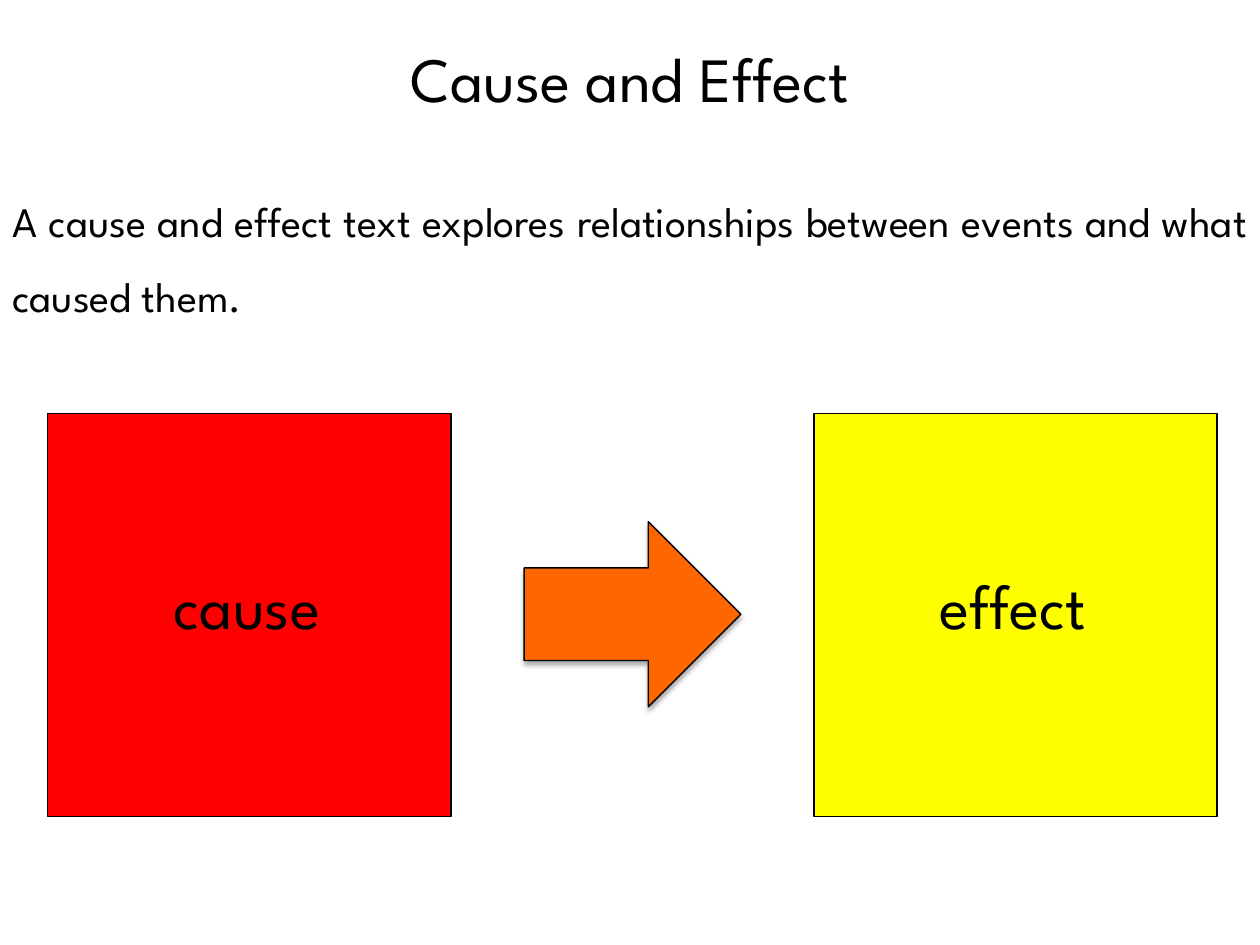
from lxml import etree
from pptx import Presentation
from pptx.dml.color import RGBColor
from pptx.enum.shapes import MSO_SHAPE
from pptx.enum.text import MSO_ANCHOR, MSO_AUTO_SIZE, PP_ALIGN
from pptx.oxml.ns import qn
from pptx.util import Inches, Pt

RECTANGLE, RIGHT_ARROW = MSO_SHAPE.RECTANGLE, MSO_SHAPE.RIGHT_ARROW
CENTER, JUSTIFY = PP_ALIGN.CENTER, PP_ALIGN.JUSTIFY
TOP, GROW = MSO_ANCHOR.TOP, MSO_AUTO_SIZE.SHAPE_TO_FIT_TEXT
FONT = "League Spartan"
COLORS = {"ink": "000000", "cause": "FF0000", "effect": "FFFF00", "arrow": "FF6600"}

deck = Presentation()
deck.slide_width, deck.slide_height = Inches(10), Inches(7.5)
page = deck.slides.add_slide(deck.slide_layouts[5])


def write(box, text, size, align, spacing=1.0):
    frame = box.text_frame
    frame.word_wrap = True
    frame.auto_size = GROW
    frame.vertical_anchor = TOP
    para = frame.paragraphs[0]
    para.alignment = align
    para.line_spacing = spacing
    span = para.add_run()
    span.text = text
    span.font.name = FONT
    span.font.size = Pt(size)
    span.font.color.rgb = RGBColor.from_string(COLORS["ink"])


def paint(shape, color):
    shape.shadow.inherit = False
    shape.fill.solid()
    shape.fill.fore_color.rgb = RGBColor.from_string(COLORS[color])
    shape.line.color.rgb = RGBColor.from_string(COLORS["ink"])
    shape.line.width = Pt(0.75)


# Title
title = page.shapes.title
title.left, title.top = 0, Inches(0.26)
title.width, title.height = deck.slide_width, Inches(0.71)
write(title, "Cause and Effect", 36, CENTER)

# Definition
definition = page.shapes.add_textbox(0, Inches(1.3), deck.slide_width, Inches(1.28))
write(definition, "A cause and effect text explores relationships between events "
      "and what caused them.", 24, JUSTIFY, 1.5)

# Arrow from cause to effect, with a soft shadow below it
arrow = page.shapes.add_shape(RIGHT_ARROW, Inches(4.16), Inches(4.14),
                              Inches(1.72), Inches(1.47))
paint(arrow, "arrow")
effects = arrow.element.spPr.find(qn("a:effectLst"))
shadow = etree.SubElement(effects, qn("a:outerShdw"), blurRad=str(Pt(3.1)),
                          dist=str(Pt(1.8)), dir="5400000", rotWithShape="0")
shade = etree.SubElement(shadow, qn("a:srgbClr"), val=COLORS["ink"])
etree.SubElement(shade, qn("a:alpha"), val="35000")

# Labelled squares, one group each
SQUARE, LABEL_WIDTH = 3.2, 2.08
for name, left in (("cause", 0.38), ("effect", 6.46)):
    group = page.shapes.add_group_shape()
    square = group.shapes.add_shape(RECTANGLE, Inches(left), Inches(3.28),
                                    Inches(SQUARE), Inches(SQUARE))
    paint(square, name)
    label = group.shapes.add_textbox(Inches(left + (SQUARE - LABEL_WIDTH) / 2 - 0.02),
                                     Inches(4.45), Inches(LABEL_WIDTH), Inches(0.71))
    write(label, name, 36, CENTER)

deck.save("out.pptx")
